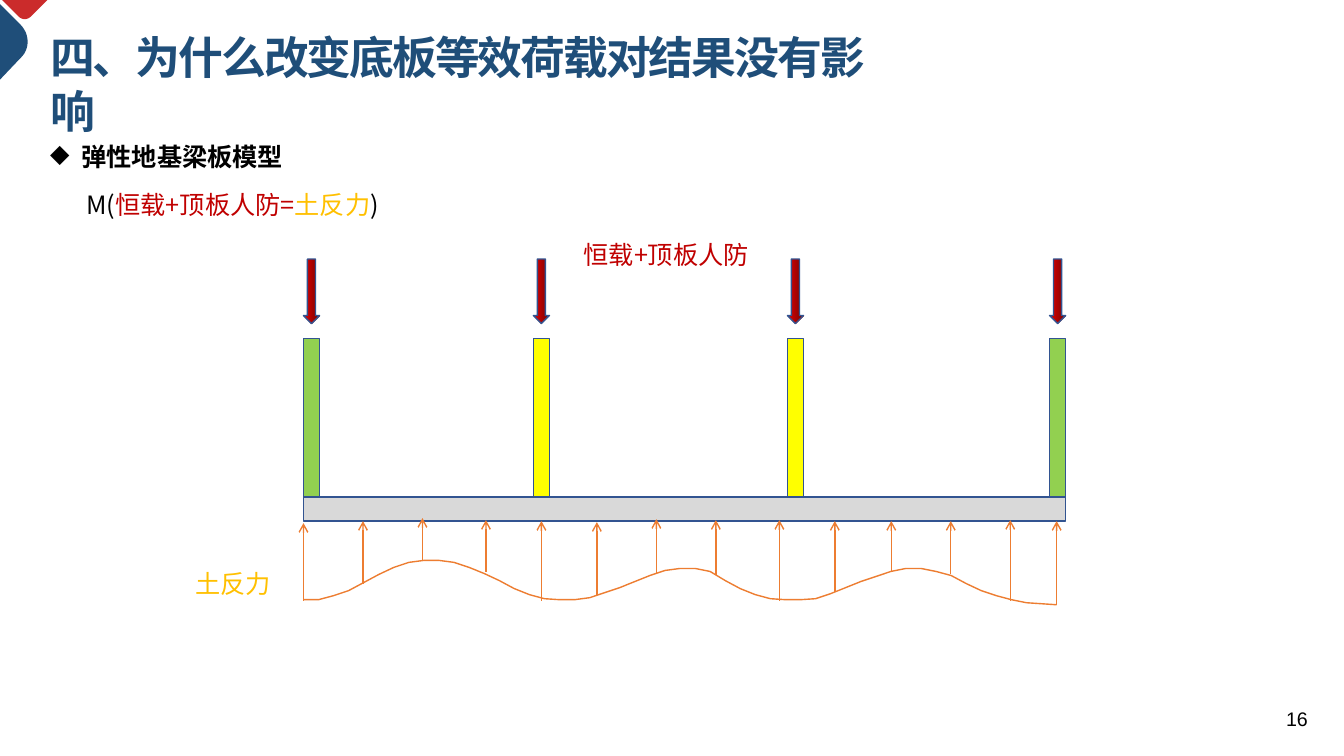
from lxml.etree import SubElement
from pptx import Presentation
from pptx.dml.color import RGBColor
from pptx.enum.shapes import MSO_CONNECTOR, MSO_SHAPE
from pptx.enum.text import MSO_ANCHOR, PP_ALIGN
from pptx.oxml.ns import qn
from pptx.util import Inches, Pt

SANS = "Noto Sans CJK SC"
BLACK, WHITE, NAVY, RED = "000000", "FFFFFF", "1F4E79", "CB2B2B"
LOAD, SOIL = "C00000", "FFC000"
EDGE, FORCE = "325491", "ED7D31"
GREEN, YELLOW, GREY = "92D050", "FFFF00", "D9D9D9"

LEFT, RIGHT = 3.01, 10.48
COLUMNS = [(3.01, GREEN), (5.29, YELLOW), (7.81, YELLOW), (10.41, GREEN)]
# Height of the soil reaction curve at equal steps from LEFT to RIGHT
CURVE = [
    5.95, 5.95, 5.91, 5.86, 5.78, 5.70, 5.63, 5.58, 5.56, 5.56,
    5.58, 5.63, 5.69, 5.76, 5.84, 5.90, 5.94, 5.95, 5.95, 5.93,
    5.88, 5.83, 5.77, 5.71, 5.66, 5.64, 5.64, 5.67, 5.76, 5.84,
    5.90, 5.94, 5.95, 5.95, 5.94, 5.89, 5.83, 5.77, 5.72, 5.67,
    5.64, 5.64, 5.67, 5.71, 5.79, 5.86, 5.91, 5.95, 5.98, 5.99, 6.00,
]
# x, foot and tip of each reaction arrow
FORCES = [
    (3.01, 5.96, 5.19), (3.6, 5.79, 5.17), (4.19, 5.56, 5.14),
    (4.82, 5.67, 5.16), (5.37, 5.96, 5.17), (5.92, 5.9, 5.18),
    (6.51, 5.69, 5.15), (7.1, 5.7, 5.16), (7.73, 5.96, 5.16),
    (8.28, 5.87, 5.17), (8.84, 5.66, 5.17), (9.43, 5.69, 5.17),
    (10.02, 5.96, 5.16), (10.48, 6, 5.17),
]


def color(code):
    return RGBColor.from_string(code)


def outline(item, code):
    item.line.color.rgb = color(code)
    item.line.width = Pt(1)


def add_text(slide, box, runs, size=18, font=SANS, bold=False):
    """Add a text box; runs are (text, colour) pairs of one paragraph."""
    shape = slide.shapes.add_textbox(*map(Inches, box))
    frame = shape.text_frame
    frame.word_wrap = True
    frame.vertical_anchor = MSO_ANCHOR.TOP
    para = frame.paragraphs[0]
    para.font.size = Pt(size)
    para.font.name = font
    para.font.bold = bold
    props = para._p.pPr.find(qn("a:defRPr"))
    SubElement(props, qn("a:ea")).set("typeface", font)
    for words, code in runs:
        run = para.add_run()
        run.text = words
        run.font.color.rgb = color(code)
    return shape


def add_bullet(para, mark, indent):
    props = para._p.get_or_add_pPr()
    props.set("marL", str(Inches(indent)))
    props.set("indent", str(-Inches(indent)))
    bullet = SubElement(props, qn("a:buChar"))
    bullet.set("char", mark)
    props.find(qn("a:defRPr")).addprevious(bullet)


def add_block(slide, kind, box, fill):
    shape = slide.shapes.add_shape(kind, *map(Inches, box))
    shape.shadow.inherit = False
    shape.fill.solid()
    shape.fill.fore_color.rgb = color(fill)
    outline(shape, EDGE)
    return shape


def add_load(slide, x):
    arrow = add_block(slide, MSO_SHAPE.DOWN_ARROW, (x, 2.57, 0.16, 0.64), LOAD)
    arrow.fill.gradient()
    arrow.fill.gradient_angle = 0
    for stop, code in zip(arrow.fill.gradient_stops, ("E30000", "760303")):
        stop.color.rgb = color(code)


def add_force(slide, x, foot, tip):
    line = slide.shapes.add_connector(
        MSO_CONNECTOR.STRAIGHT, *map(Inches, (x, foot, x, tip)))
    outline(line, FORCE)
    SubElement(line.line._get_or_add_ln(), qn("a:tailEnd")).set("type", "arrow")
    SubElement(line._element.spPr, qn("a:effectLst"))


def add_path(slide, points, close):
    spots = [(Inches(x), Inches(y)) for x, y in points]
    path = slide.shapes.build_freeform(*spots[0])
    path.add_line_segments(spots[1:], close=close)
    shape = path.convert_to_shape()
    shape.shadow.inherit = False
    return shape


def bend(a, b, c, d, steps=12):
    """Return points along a cubic curve from a to d."""
    ts = [i / steps for i in range(steps + 1)]
    return [
        tuple((1 - t) ** 3 * p + 3 * t * (1 - t) ** 2 * q
              + 3 * t * t * (1 - t) * r + t ** 3 * s
              for p, q, r, s in zip(a, b, c, d))
        for t in ts
    ]


def add_corner(slide, points, fill):
    shape = add_path(slide, points, True)
    shape.fill.solid()
    shape.fill.fore_color.rgb = color(fill)
    shape.line.fill.background()


def add_frame(slide):
    tip = bend((0.31, 0.16), (0.27, 0.2), (0.22, 0.2), (0.18, 0.16))
    add_corner(slide, [(0.02, 0), (0.47, 0), *tip], RED)
    side = bend((0.2, 0.24), (0.3, 0.34), (0.3, 0.49), (0.2, 0.58))
    add_corner(slide, [(0, 0.04), *side, (0, 0.79)], NAVY)
    page = add_text(slide, (12.56, 6.96, 0.51, 0.4), [("16", BLACK)], 14, "Arial")
    page.text_frame.paragraphs[0].alignment = PP_ALIGN.RIGHT


def add_heads(slide):
    title = add_text(slide, (0.4, 0.25, 8.67, 0.64),
                     [("四、为什么改变底板等效荷载对结果没有影响", NAVY)],
                     32, "Arial", True)
    title.fill.solid()
    title.fill.fore_color.rgb = color(WHITE)
    title.text_frame.margin_right = Inches(0.2)
    para = title.text_frame.paragraphs[0]
    para.runs[0].font._element.set("spc", "-150")

    topic = add_text(slide, (0.4, 1.05, 6.76, 1.31),
                     [("弹性地基梁板模型", BLACK)], bold=True)
    para = topic.text_frame.paragraphs[0]
    para.line_spacing = 2.0
    add_bullet(para, "◆", 0.31)


def add_model(slide):
    add_block(slide, MSO_SHAPE.RECTANGLE, (LEFT, 4.93, 7.56, 0.24), GREY)
    for x, fill in COLUMNS:
        add_block(slide, MSO_SHAPE.RECTANGLE, (x, 3.36, 0.16, 1.57), fill)
        add_load(slide, x)
    step = (RIGHT - LEFT) / (len(CURVE) - 1)
    curve = add_path(
        slide, [(LEFT + i * step, y) for i, y in enumerate(CURVE)], False)
    curve.fill.background()
    outline(curve, FORCE)
    for force in FORCES:
        add_force(slide, *force)


def add_labels(slide):
    add_text(slide, (5.69, 2.33, 1.96, 0.4), [("恒载+顶板人防", LOAD)])
    add_text(slide, (1.84, 5.59, 1.1, 0.4), [("土反力", SOIL)])
    add_text(slide, (0.76, 1.83, 4.64, 0.4),
             [("M(", BLACK), ("恒载+顶板人防=", LOAD), ("土反力", SOIL), (")", BLACK)])


def main():
    deck = Presentation()
    deck.slide_width, deck.slide_height = Inches(13.33), Inches(7.5)
    slide = deck.slides.add_slide(deck.slide_layouts[6])
    add_frame(slide)
    add_heads(slide)
    add_model(slide)
    add_labels(slide)
    deck.save("out.pptx")


if __name__ == "__main__":
    main()
